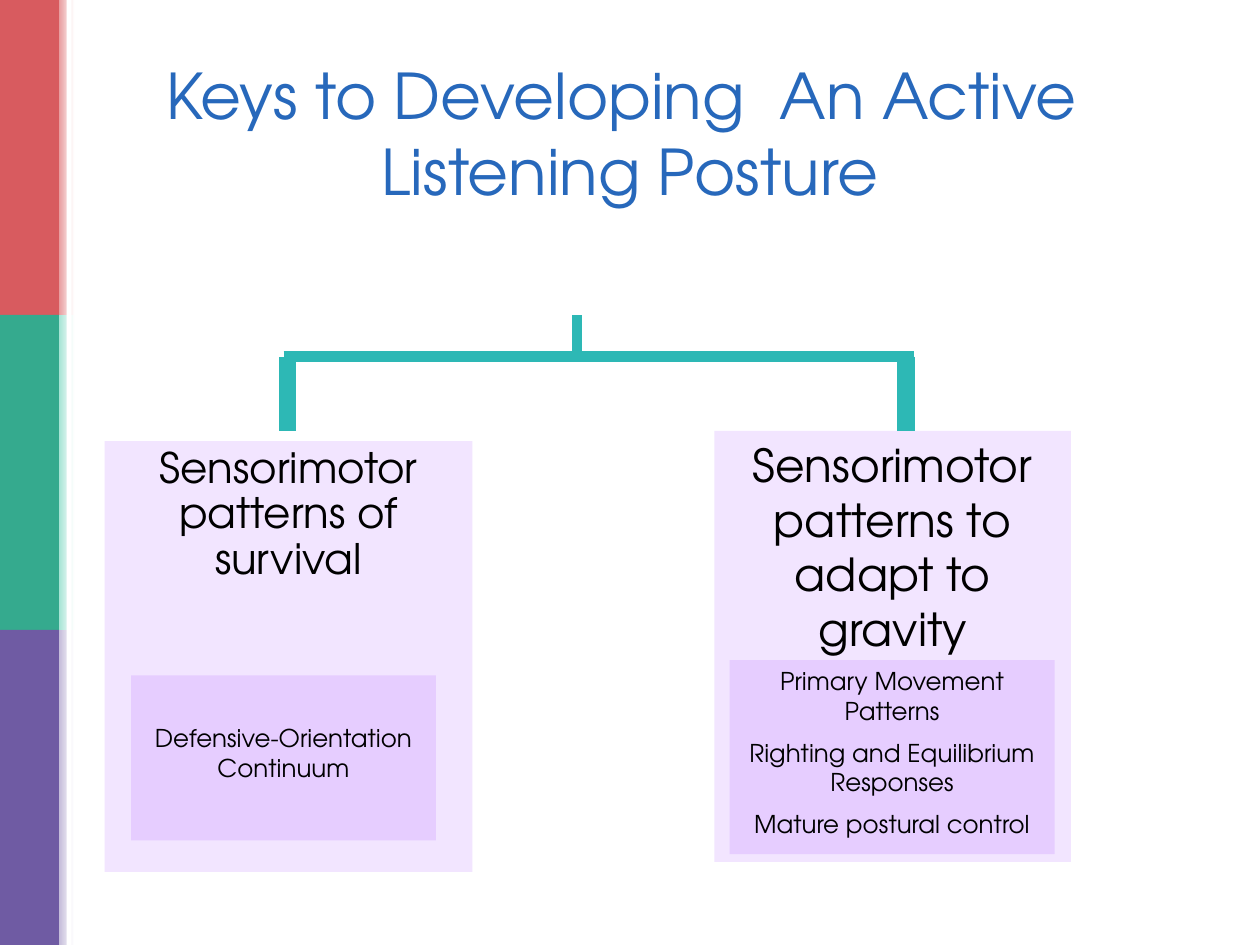
from pptx import Presentation
from pptx.dml.color import RGBColor
from pptx.enum.shapes import MSO_CONNECTOR, MSO_SHAPE
from pptx.enum.text import MSO_ANCHOR, PP_ALIGN
from pptx.oxml.ns import qn
from pptx.util import Inches, Pt
from lxml import etree

RECT = MSO_SHAPE.RECTANGLE
STRAIGHT = MSO_CONNECTOR.STRAIGHT
CENTER = PP_ALIGN.CENTER
TOP = MSO_ANCHOR.TOP

THEME = {
    "font": "TeX Gyre Adventor",
    "title": "2768BB", "text": "000000", "white": "FFFFFF",
    "branch": "F2E5FF", "detail": "E6CDFF", "tree": "2DB8B5",
    "title_size": 36, "detail_size": 14,
}

# Content: boxes are left, top, width, height in inches
TITLE = "Keys to Developing  An Active  Listening Posture"
TITLE_BOX = (0.69, 0.4, 8.62, 1.45)

BRANCHES = [
    {"heading": "Sensorimotor patterns of survival", "size": 24, "spacing": 0.9,
     "box": (0.83, 3.5, 2.92, 3.42), "detail_box": (1.04, 5.36, 2.42, 1.31),
     "detail_inset": 0.38, "details": ["Defensive-Orientation Continuum"]},
    {"heading": "Sensorimotor patterns to adapt to gravity", "size": 26, "spacing": 1.0,
     "box": (5.67, 3.42, 2.83, 3.42), "detail_box": (5.79, 5.24, 2.58, 1.54),
     "detail_inset": 0.05, "details": ["Primary Movement Patterns",
                                       "Righting and Equilibrium Responses",
                                       "Mature postural control"]},
]

# Side band colours from top to bottom: solid, start of the fade
BANDS = [("D85B5F", "E89D9F"), ("35AA8E", "A7E4D5"), ("6F5BA3", "C5BDDA")]
BAND_W, FADE_W = 0.47, 0.12

# Tree geometry
STEM_X, STEM_TOP, BAR_Y, DROP_BOTTOM = 4.58, 2.5, 2.83, 3.42
BAR_LEFT, BAR_RIGHT = 2.25, 7.25
DROPS_X = (7.19, 2.28)
THIN, THICK = 6, 10


def rgb(value):
    return RGBColor.from_string(value)


def add_box(slide, box, fill=None, fade=None):
    shape = slide.shapes.add_shape(RECT, *map(Inches, box))
    shape.shadow.inherit = False
    shape.line.fill.background()
    if fade:
        shape.fill.gradient()
        shape.fill.gradient_angle = 0
        for stop, color in zip(shape.fill.gradient_stops, fade):
            stop.color.rgb = rgb(color)
    elif fill:
        shape.fill.solid()
        shape.fill.fore_color.rgb = rgb(fill)
    else:
        shape.fill.background()
    return shape


def write(shape, lines, size, color, spacing=1.0, top_inset=0.05):
    frame = shape.text_frame
    frame.word_wrap = True
    frame.vertical_anchor = TOP
    frame.margin_top = Inches(top_inset)
    frame.text = "\n".join(lines)
    for index, paragraph in enumerate(frame.paragraphs):
        paragraph.alignment = CENTER
        paragraph.line_spacing = spacing
        if index:
            paragraph.space_before = Pt(7)
        for run in paragraph.runs:
            run.font.name = THEME["font"]
            run.font.size = Pt(size)
            run.font.color.rgb = rgb(color)


def add_line(slide, x1, y1, x2, y2, width):
    line = slide.shapes.add_connector(STRAIGHT, *map(Inches, (x1, y1, x2, y2)))
    line.line.color.rgb = rgb(THEME["tree"])
    line.line.width = Pt(width)
    etree.SubElement(line._element.spPr, qn("a:effectLst"))


def main():
    prs = Presentation()
    prs.slide_width, prs.slide_height = Inches(10), Inches(7.5)
    slide = prs.slides.add_slide(prs.slide_layouts[6])

    # Side bands with faded edges
    band_h = 7.5 / len(BANDS)
    for row, (solid, pale) in enumerate(BANDS):
        add_box(slide, (0, row * band_h, BAND_W, band_h), solid)
        add_box(slide, (BAND_W, row * band_h, FADE_W, band_h), fade=(pale, THEME["white"]))
    add_box(slide, (0.53, 0, 0.04, 7.5), THEME["white"])

    # Title
    write(add_box(slide, TITLE_BOX), [TITLE], THEME["title_size"], THEME["title"])

    # Branch panels
    for branch in BRANCHES:
        panel = add_box(slide, branch["box"], THEME["branch"])
        write(panel, [branch["heading"]], branch["size"], THEME["text"], branch["spacing"])

    # Tree lines
    add_line(slide, STEM_X, STEM_TOP, STEM_X, BAR_Y, THIN)
    add_line(slide, BAR_LEFT, BAR_Y, BAR_RIGHT, BAR_Y, THIN)
    for x in DROPS_X:
        add_line(slide, x, BAR_Y, x, DROP_BOTTOM, THICK)

    # Detail panels
    for branch in BRANCHES:
        panel = add_box(slide, branch["detail_box"], THEME["detail"])
        write(panel, branch["details"], THEME["detail_size"], THEME["text"],
              top_inset=branch["detail_inset"])

    prs.save("out.pptx")


if __name__ == "__main__":
    main()
